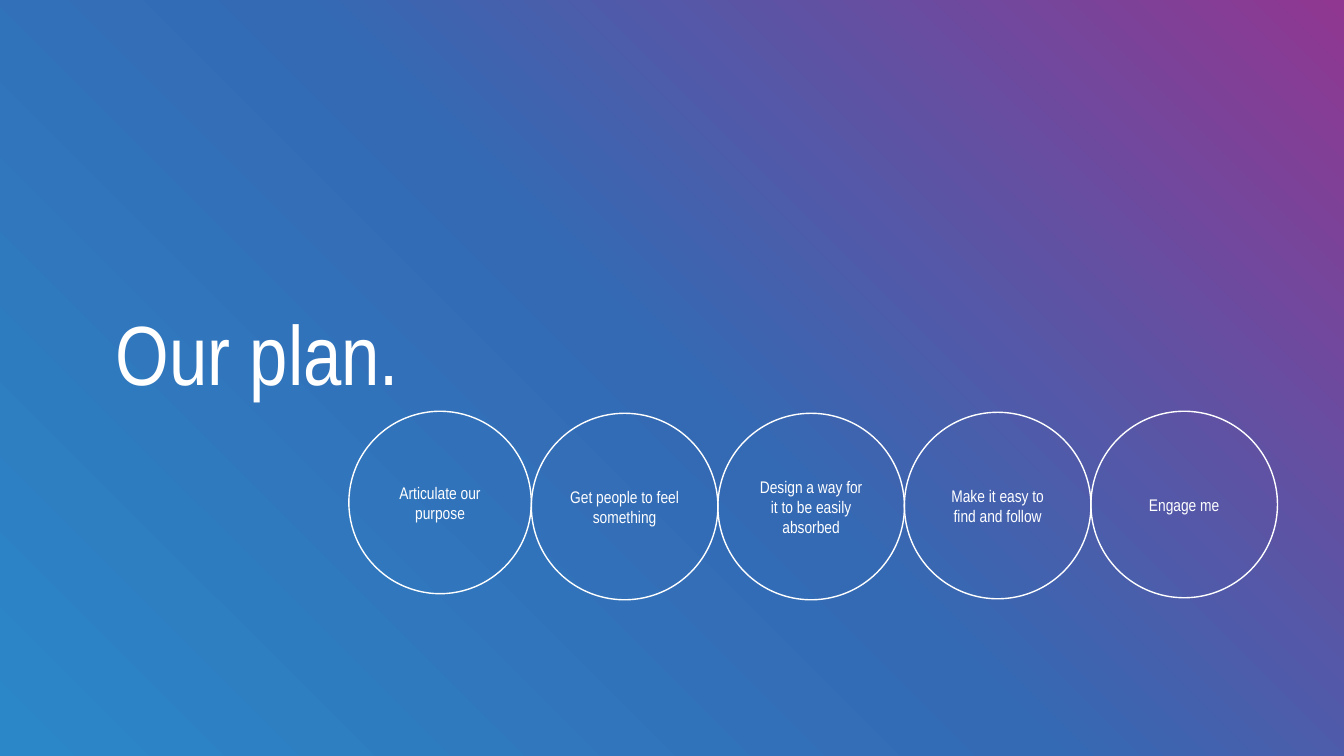
from copy import deepcopy

from pptx import Presentation
from pptx.dml.color import RGBColor
from pptx.enum.shapes import MSO_SHAPE
from pptx.enum.text import MSO_ANCHOR, MSO_AUTO_SIZE, PP_ALIGN
from pptx.util import Emu, Pt

SCALE = 9144  # EMU in one px, 100 px to the inch
WHITE = "FFFFFF"


def px(n):
    return Emu(n * SCALE)


def rgb(code):
    return RGBColor.from_string(code)


class Deck:
    font = "Arial Narrow"
    ink = WHITE

    def __init__(self, wide, high):
        self.prs = Presentation()
        self.prs.slide_width, self.prs.slide_height = px(wide), px(high)
        self.slide = self.prs.slides.add_slide(self.prs.slide_layouts[6])

    def backdrop(self, codes, angle):
        """Fill the background with three evenly spaced gradient stops."""
        fill = self.slide.background.fill
        fill.gradient()
        fill.gradient_angle = angle
        first = self.slide.element.xpath(".//a:gs")[0]
        first.addnext(deepcopy(first))
        for i, (stop, code) in enumerate(zip(fill.gradient_stops, codes)):
            stop.color.rgb = rgb(code)
            stop.position = i / 2

    def label(self, shape, text, size, align):
        frame = shape.text_frame
        frame.word_wrap = True
        frame.text = text
        para = frame.paragraphs[0]
        para.alignment = align
        font = para.runs[0].font
        font.name, font.size = self.font, Pt(size)
        font.color.rgb = rgb(self.ink)
        return frame

    def title(self, text, x, y, w, h):
        box = self.slide.shapes.add_textbox(px(x), px(y), px(w), px(h))
        frame = self.label(box, text, 60, PP_ALIGN.LEFT)
        frame.auto_size = MSO_AUTO_SIZE.SHAPE_TO_FIT_TEXT

    def ring(self, text, x, y, size):
        ring = self.slide.shapes.add_shape(
            MSO_SHAPE.OVAL, px(x), px(y), px(size), px(size))
        ring.shadow.inherit = False
        ring.fill.background()
        ring.line.color.rgb = rgb(self.ink)
        ring.line.width = Pt(1)
        frame = self.label(ring, text, 12, PP_ALIGN.CENTER)
        frame.vertical_anchor = MSO_ANCHOR.MIDDLE


def main():
    deck = Deck(1333, 750)
    deck.backdrop(["2B87C8", "346AB4", "903791"], 45)
    deck.title("Our plan.", 105, 294, 659, 111)
    deck.ring("Articulate our purpose", 346, 408, 181)
    size = 185
    steps = [
        ("Get people to feel something", 410),
        ("Design a way for it to be easily absorbed", 410),
        ("Make it easy to find and follow", 409),
        ("Engage me", 408),
    ]
    for i, (text, top) in enumerate(steps):
        deck.ring(text, 527 + i * size, top, size)
    deck.prs.save("out.pptx")


if __name__ == "__main__":
    main()
